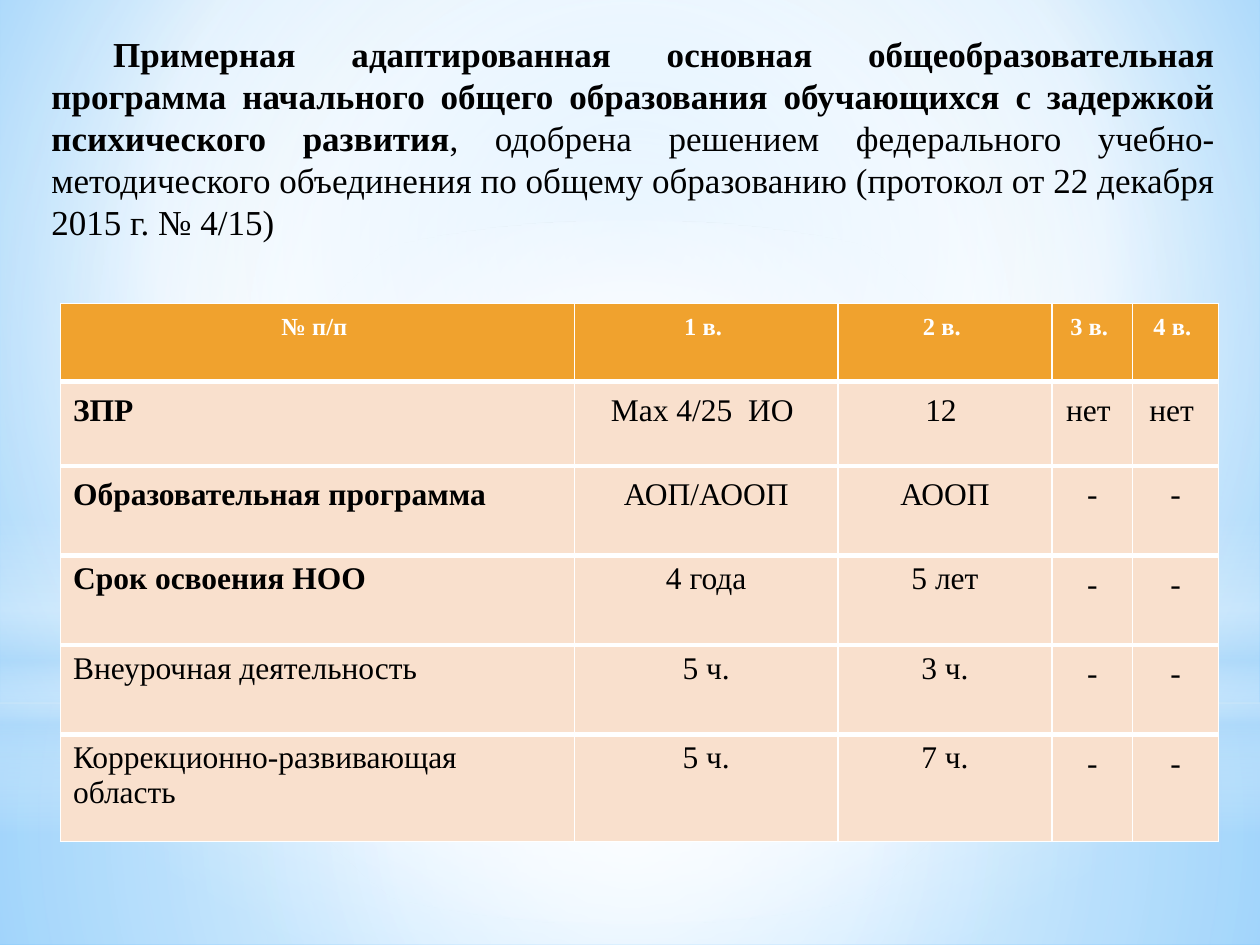
"""Build a slide on the adapted school programme, with a lead text and a table."""
from pptx import Presentation, util as u
from pptx.dml import color
from pptx.enum import shapes, text
from pptx.oxml import parse_xml
from pptx.oxml.ns import nsdecls

FONT = "Times New Roman"
HUES = {"ink": "000000", "white": "FFFFFF", "head": "F0A22E", "body": "F9E0CD",
        "sky": "9ED5FF", "deep": "5BB9FF", "mist": "B4DCFA"}
COLS = [4.08, 2.09, 1.7, 0.64, 0.68]
ROWS = [0.62, 0.67, 0.71, 0.71, 0.71, 0.85]
CELLS = [
    ["№ п/п ", "1 в. ", "2 в. ", "3 в. ", "4 в. "],
    ["ЗПР", "Max 4/25  ИО ", "12 ", "нет ", "нет "],
    ["Образовательная программа", "АОП/АООП", "АООП", "-", "-"],
    ["Срок освоения НОО", "4 года", "5 лет", "-", "-"],
    ["Внеурочная деятельность", "5 ч.", "3 ч.", "-", "-"],
    ["Коррекционно-развивающая область", "5 ч.", "7 ч.", "-", "-"],
]
LEAD = [
    ("Примерная адаптированная основная общеобразовательная программа начального "
     "общего образования обучающихся с задержкой психического развития", True),
    (", одобрена решением федерального учебно-методического объединения по общему "
     "образованию (протокол от 22 декабря 2015 г. № 4/15)", False),
]
MID = (50, 50, 50, 50)
BANDS = [
    ("RECTANGLE", 5.58, 1.92, MID,
     [(0, "white", 91), (37, "white", 76), (100, "mist", 79)]),
    ("RECTANGLE", 0, 5.58, MID,
     [(0, "white", 89), (48, "white", 62), (100, "mist", 79)]),
    ("RECTANGLE", 4.12, 2.5, None,
     [(0, "white", 0), (29, "white", 30), (45, "mist", 40),
      (55, "white", 26), (65, "mist", 60), (100, "white", 0)]),
    ("OVAL", 1.75, 5.58, MID, [(0, "white", 100), (56, "white", 0)]),
]


def rgb(name):
    """Return a named hue as a colour."""
    return color.RGBColor.from_string(HUES[name])


def shade(fill, root, stops, focus):
    """Give a fill a round gradient about a focus, or a downward one without it."""
    fill.solid()
    marks = "".join(
        f'<a:gs pos="{pos * 1000}"><a:srgbClr val="{HUES[hue]}">'
        f'<a:alpha val="{alpha * 1000}"/></a:srgbClr></a:gs>'
        for pos, hue, alpha in stops)
    way = '<a:lin ang="5400000" scaled="0"/>'
    if focus:
        sides = " ".join(f'{k}="{v * 1000}"' for k, v in zip("ltrb", focus))
        way = f'<a:path path="circle"><a:fillToRect {sides}/></a:path>'
    old = root.xpath(".//a:solidFill")[0]
    old.getparent().replace(old, parse_xml(
        f'<a:gradFill {nsdecls("a")} rotWithShape="1">'
        f'<a:gsLst>{marks}</a:gsLst>{way}</a:gradFill>'))


def add_band(slide, kind, top, high, focus, stops):
    """Add a full-width shape of soft light."""
    band = slide.shapes.add_shape(getattr(shapes.MSO_SHAPE, kind), 0,
                                  u.Inches(top), u.Inches(10), u.Inches(high))
    band.shadow.inherit = False
    band.line.fill.background()
    shade(band.fill, band.element, stops, focus)


def add_run(para, words, size, hue, bold):
    """Add one styled run to a paragraph."""
    run = para.add_run()
    run.text = words
    run.font.name, run.font.size, run.font.bold = FONT, u.Pt(size), bold
    run.font.color.rgb = rgb(hue)


def edge(cell, side, width):
    """Draw one white cell border."""
    cell._tc.get_or_add_tcPr().append(parse_xml(
        f'<a:ln{side} {nsdecls("a")} w="{u.Pt(width)}"><a:solidFill>'
        f'<a:srgbClr val="{HUES["white"]}"/></a:solidFill></a:ln{side}>'))


def fill_cell(cell, words, row, col):
    """Style and fill one cell by its place in the table."""
    head = row == 0
    widths = {"L": 1, "R": 1, "T": 1 if head else 3,
              "B": 1 if row == len(ROWS) - 1 else 3}
    for side, width in widths.items():
        edge(cell, side, width)
    cell.fill.solid()
    cell.fill.fore_color.rgb = rgb("head" if head else "body")
    para = cell.text_frame.paragraphs[0]
    para.alignment = text.PP_ALIGN.CENTER if head or col else text.PP_ALIGN.LEFT
    para.line_spacing = 1.15 if row < 3 or col > 2 else 1.0
    bold = head or (col == 0 and row < 4)
    add_run(para, words, 14 if head else 18, "white" if head else "ink", bold)


def add_grid(slide):
    """Add the table of programme variants."""
    grid = slide.shapes.add_table(
        len(ROWS), len(COLS), u.Inches(0.48), u.Inches(2.41),
        u.Inches(sum(COLS)), u.Inches(sum(ROWS))).table
    for col, wide in zip(grid.columns, COLS):
        col.width = u.Inches(wide)
    for row, high in zip(grid.rows, ROWS):
        row.height = u.Inches(high)
    for r, line in enumerate(CELLS):
        for c, words in enumerate(line):
            fill_cell(grid.cell(r, c), words, r, c)


def add_lead(slide):
    """Add the justified lead text."""
    box = slide.shapes.add_textbox(u.Inches(0.31), u.Inches(0.2),
                                   u.Inches(9.43), u.Inches(1.78))
    frame = box.text_frame
    frame.word_wrap = True
    frame.auto_size = text.MSO_AUTO_SIZE.SHAPE_TO_FIT_TEXT
    frame.vertical_anchor = text.MSO_ANCHOR.MIDDLE
    para = frame.paragraphs[0]
    para.alignment = text.PP_ALIGN.JUSTIFY
    para._p.get_or_add_pPr().set("indent", str(u.Inches(0.49)))
    for words, bold in LEAD:
        add_run(para, words, 20, "ink", bold)


def main():
    """Build and save the slide."""
    deck = Presentation()
    deck.slide_width, deck.slide_height = u.Inches(10), u.Inches(7.5)
    slide = deck.slides.add_slide(deck.slide_layouts[6])
    shade(slide.background.fill, slide.element,
          [(0, "sky", 100), (60, "white", 100), (100, "deep", 100)],
          (20, 10, 20, 60))
    for band in BANDS:
        add_band(slide, *band)
    add_grid(slide)
    add_lead(slide)
    deck.save("out.pptx")


if __name__ == "__main__":
    main()
